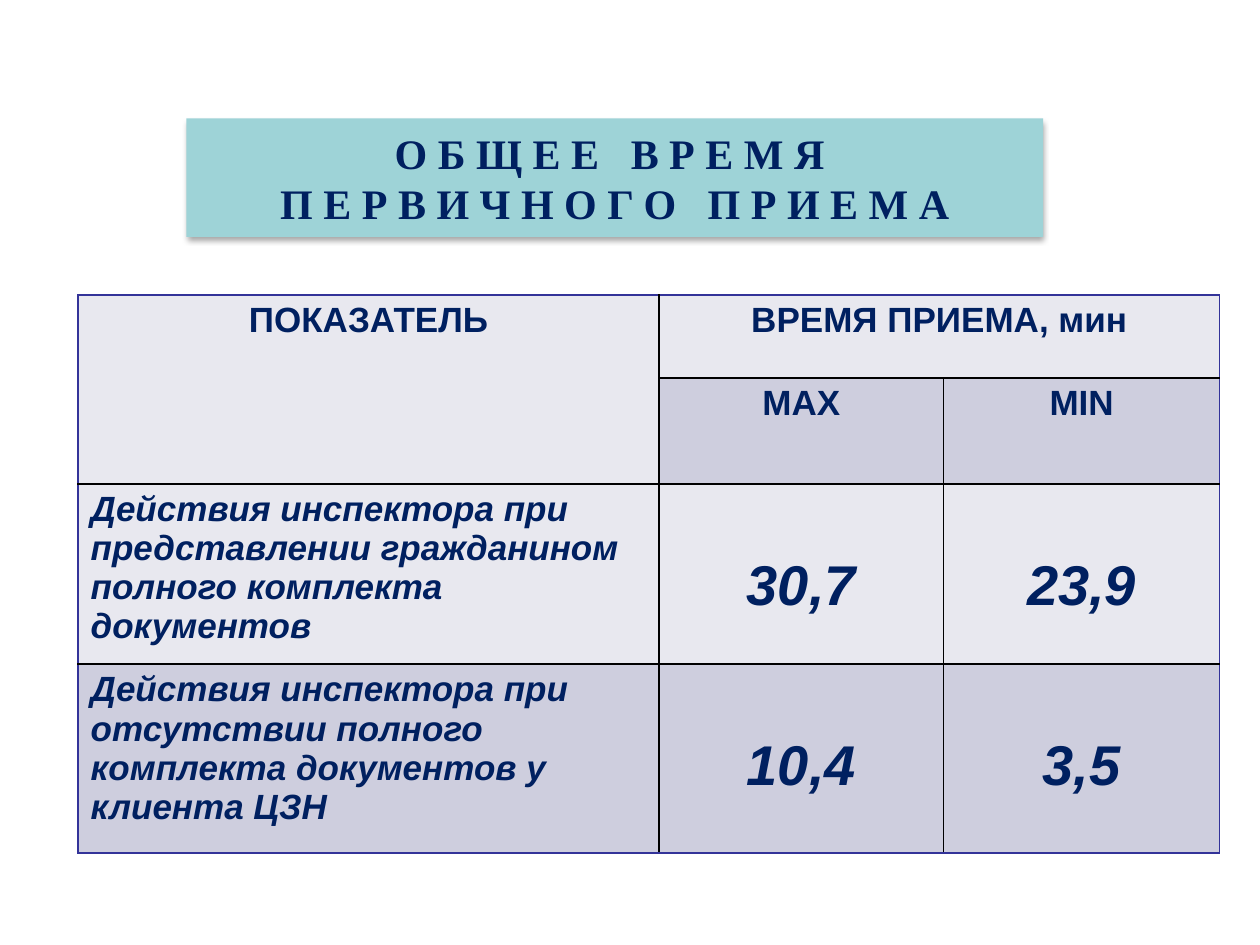
from dataclasses import dataclass

from lxml import etree
from pptx import Presentation
from pptx.dml.color import RGBColor
from pptx.enum import text
from pptx.oxml import ns
from pptx.util import Inches, Pt

NAVY = RGBColor(0x00, 0x20, 0x60)
TEAL = RGBColor(0x9E, 0xD3, 0xD7)
LIGHT = RGBColor(0xE8, 0xE8, 0xEF)
LAVENDER = RGBColor(0xCE, 0xCE, 0xDE)
BLACK = RGBColor(0x00, 0x00, 0x00)
INDIGO = RGBColor(0x33, 0x33, 0x99)

COLUMN_WIDTHS = (4.61, 2.26, 2.19)
ROW_HEIGHTS = (0.66, 0.84, 1.43, 1.5)
ROW_FILLS = (LIGHT, LAVENDER, LIGHT, LAVENDER)


@dataclass(frozen=True)
class CellStyle:
    size: int = 20
    italic: bool = False
    alignment: text.PP_ALIGN = text.PP_ALIGN.CENTER
    margin_top: float = 0.05


@dataclass(frozen=True)
class CellContent:
    row: int
    column: int
    wording: str
    style: CellStyle
    row_span: int = 1
    column_span: int = 1


HEADING = CellStyle()
ACTION = CellStyle(italic=True, alignment=text.PP_ALIGN.LEFT)
VALUE = CellStyle(size=32, italic=True, margin_top=0.56)

CELLS = (
    CellContent(0, 0, "ПОКАЗАТЕЛЬ", HEADING, row_span=2),
    CellContent(0, 1, "ВРЕМЯ ПРИЕМА, мин", HEADING, column_span=2),
    CellContent(1, 1, "MAX", HEADING),
    CellContent(1, 2, "MIN", HEADING),
    CellContent(2, 0, "Действия инспектора при представлении гражданином "
                      "полного комплекта документов", ACTION),
    CellContent(2, 1, "30,7", VALUE),
    CellContent(2, 2, "23,9", VALUE),
    CellContent(3, 0, "Действия инспектора при отсутствии полного "
                      "комплекта документов у клиента ЦЗН", ACTION),
    CellContent(3, 1, "10,4", VALUE),
    CellContent(3, 2, "3,5", VALUE),
)


def add_element(parent, tag: str, **attributes):
    values = {name: str(value) for name, value in attributes.items()}
    return etree.SubElement(parent, ns.qn(tag), values)


def add_shadow(shape) -> None:
    effects = add_element(shape._element.spPr, "a:effectLst")
    shadow = add_element(effects, "a:outerShdw", blurRad=Pt(3.1), dist=Pt(1.8),
                         dir=90 * 60000, rotWithShape=0)
    color = add_element(shadow, "a:srgbClr", val=BLACK)
    add_element(color, "a:alpha", val=35000)


def format_title(title) -> None:
    title.left, title.top = Inches(1.48), Inches(0.94)
    title.width, title.height = Inches(6.8), Inches(0.94)
    title.fill.solid()
    title.fill.fore_color.rgb = TEAL
    title.line.fill.background()
    add_shadow(title)
    frame = title.text_frame
    frame.text = "ОБЩЕЕ ВРЕМЯ ПЕРВИЧНОГО ПРИЕМА"
    frame.word_wrap = True
    frame.auto_size = text.MSO_AUTO_SIZE.NONE
    frame.vertical_anchor = text.MSO_ANCHOR.MIDDLE
    paragraph = frame.paragraphs[0]
    paragraph.alignment = text.PP_ALIGN.CENTER
    paragraph.font.name = "Times New Roman"
    paragraph.font.size = Pt(24)
    paragraph.font.bold = True
    paragraph.font.color.rgb = NAVY
    paragraph.runs[0].font._element.set("spc", "600")


def add_borders(cell, content: CellContent) -> None:
    properties = cell._tc.get_or_add_tcPr()
    outer_edges = {
        "a:lnL": content.column == 0,
        "a:lnR": content.column + content.column_span == len(COLUMN_WIDTHS),
        "a:lnT": content.row == 0,
        "a:lnB": content.row + content.row_span == len(ROW_HEIGHTS),
    }
    for tag, is_outer in outer_edges.items():
        line = add_element(properties, tag, w=Pt(1))
        fill = add_element(line, "a:solidFill")
        add_element(fill, "a:srgbClr", val=INDIGO if is_outer else BLACK)


def fill_cell(table, content: CellContent) -> None:
    cell = table.cell(content.row, content.column)
    if content.row_span > 1 or content.column_span > 1:
        cell.merge(table.cell(content.row + content.row_span - 1,
                              content.column + content.column_span - 1))
    add_borders(cell, content)
    cell.fill.solid()
    cell.fill.fore_color.rgb = ROW_FILLS[content.row]
    cell.margin_top = Inches(content.style.margin_top)
    cell.text = content.wording
    paragraph = cell.text_frame.paragraphs[0]
    paragraph.alignment = content.style.alignment
    paragraph.font.name = "Arial"
    paragraph.font.size = Pt(content.style.size)
    paragraph.font.bold = True
    paragraph.font.italic = content.style.italic
    paragraph.font.color.rgb = NAVY


def add_time_table(slide) -> None:
    table = slide.shapes.add_table(
        len(ROW_HEIGHTS), len(COLUMN_WIDTHS), Inches(0.62), Inches(2.34),
        Inches(sum(COLUMN_WIDTHS)), Inches(sum(ROW_HEIGHTS))).table
    table.first_row = False
    table.horz_banding = False
    for column, width in zip(table.columns, COLUMN_WIDTHS):
        column.width = Inches(width)
    for row, height in zip(table.rows, ROW_HEIGHTS):
        row.height = Inches(height)
    for content in CELLS:
        fill_cell(table, content)


def main() -> None:
    presentation = Presentation()
    presentation.slide_width = Inches(10)
    presentation.slide_height = Inches(7.5)
    slide = presentation.slides.add_slide(presentation.slide_layouts[5])
    format_title(slide.shapes.title)
    add_time_table(slide)
    presentation.save("out.pptx")


if __name__ == "__main__":
    main()
